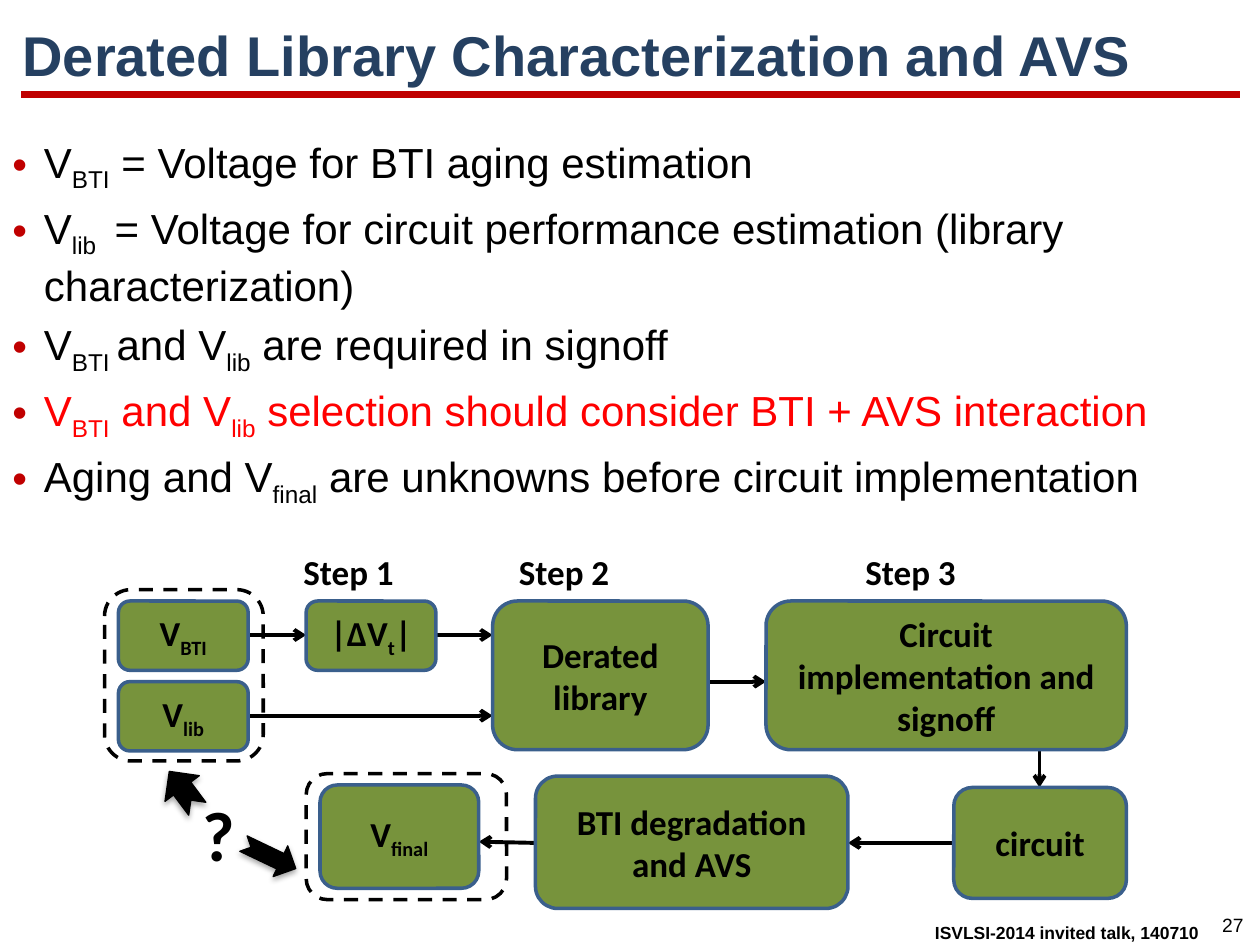
from lxml.etree import SubElement
from pptx import Presentation
from pptx.dml.color import RGBColor
from pptx.enum.dml import MSO_LINE
from pptx.enum.shapes import MSO_CONNECTOR, MSO_SHAPE
from pptx.enum.text import MSO_ANCHOR, PP_ALIGN
from pptx.oxml import parse_xml
from pptx.oxml.ns import nsdecls, qn
from pptx.util import Pt

PX = 9144
BLACK = RGBColor(0x00, 0x00, 0x00)
NAVY = RGBColor(0x25, 0x40, 0x61)
CRIMSON = RGBColor(0xC0, 0x00, 0x00)
RED = RGBColor(0xFF, 0x00, 0x00)
GREEN = RGBColor(0x77, 0x93, 0x3C)
BLUE = RGBColor(0x3A, 0x5F, 0x8C)

BULLETS = [
    ("V~BTI~ = Voltage for BTI aging estimation", BLACK),
    ("V~lib ~ = Voltage for circuit performance estimation (library characterization)", BLACK),
    ("V~BTI ~and V~lib~ are required in signoff", BLACK),
    ("V~BTI~ and V~lib~ selection should consider BTI + AVS interaction", RED),
    ("Aging and V~final~ are unknowns before circuit implementation", BLACK),
]
STEPS = [("Step 1", 148), ("Step 2", 319), ("Step 3", 594)]
BLOCKS = [
    ("BTI degradation and AVS", 342, 184, 248, 105),
    ("V~final~", 171, 191, 126, 82),
    ("V~BTI~", 11, 45, 103, 55),
    ("|ΔV~t~|", 160, 45, 103, 55),
    ("V~lib~", 11, 109, 103, 55),
    ("Derated library", 308, 45, 171, 118),
    ("Circuit implementation and signoff", 525, 45, 286, 118),
    ("circuit", 674, 193, 137, 88),
]
GROUPS = [(160, 182, 159, 100), (0, 36, 126, 136)]
FLOWS = [
    (674, 237, 590, 237),
    (342, 237, 297, 236),
    (114, 72, 160, 72),
    (114, 136, 308, 136),
    (262, 72, 308, 72),
    (479, 109, 525, 109),
    (742, 164, 742, 193),
]
POINTERS = [(108, 234, 46, 27, 25.5), (44, 178, 37, 34, 233.2)]


def scaled(*lengths):
    """Turn px lengths into EMU."""
    return [length * PX for length in lengths]


def write(paragraph, text, *, size, font="Arial", color=BLACK, bold=False, align=PP_ALIGN.LEFT):
    """Write text into a paragraph, with the parts between tildes as subscripts."""
    paragraph.alignment = align
    for index, part in enumerate(text.split("~")):
        if not part:
            continue
        run = paragraph.add_run()
        run.text = part
        run.font.name = font
        run.font.size = Pt(size)
        run.font.bold = bold
        run.font.color.rgb = color
        if index % 2:
            run._r.get_or_add_rPr().set("baseline", "-25000")


def add_frame(slide, box, wrap=True, anchor=MSO_ANCHOR.TOP):
    """Add an empty text box and return its text frame."""
    frame = slide.shapes.add_textbox(*scaled(*box)).text_frame
    frame.word_wrap = wrap
    frame.vertical_anchor = anchor
    return frame


def add_line(slide, ends, color=BLACK, width=2.25, arrow=False):
    """Add a straight line, with an open arrowhead at its end if asked."""
    connector = slide.shapes.add_connector(MSO_CONNECTOR.STRAIGHT, *scaled(*ends))
    connector.line.color.rgb = color
    connector.line.width = Pt(width)
    if arrow:
        SubElement(connector.line._get_or_add_ln(), qn("a:tailEnd"), type="arrow")
    SubElement(connector._element.spPr, qn("a:effectLst"))


def add_block(slide, box, kind=MSO_SHAPE.ROUNDED_RECTANGLE, fill=None, line=BLACK, width=2):
    """Add a preset shape without a shadow."""
    shape = slide.shapes.add_shape(kind, *scaled(*box))
    shape.shadow.inherit = False
    if fill is None:
        shape.fill.background()
    else:
        shape.fill.solid()
        shape.fill.fore_color.rgb = fill
    shape.line.color.rgb = line
    shape.line.width = Pt(width)
    return shape


def add_pointer(slide, box, angle):
    """Add a rotated notched arrow with a soft shadow below it."""
    shape = add_block(slide, box, MSO_SHAPE.NOTCHED_RIGHT_ARROW, fill=BLACK, width=0.75)
    shape.rotation = angle
    shape._element.spPr.find(qn("a:effectLst")).append(parse_xml(
        f'<a:outerShdw {nsdecls("a")} blurRad="40000" dist="23000" dir="5400000" rotWithShape="0">'
        '<a:srgbClr val="000000"><a:alpha val="35000"/></a:srgbClr></a:outerShdw>'))


def add_bullet(paragraph):
    """Give a paragraph a hanging crimson bullet."""
    properties = paragraph._p.get_or_add_pPr()
    properties.set("marL", str(25 * PX))
    properties.set("indent", str(-25 * PX))
    color = SubElement(properties, qn("a:buClr"))
    SubElement(color, qn("a:srgbClr"), val=str(CRIMSON))
    SubElement(properties, qn("a:buFont"), typeface="Arial")
    SubElement(properties, qn("a:buChar"), char="•")


def add_header(slide, left, top, width, height):
    """Place the title and the rule under it."""
    frame = add_frame(slide, (left, top, width, height), anchor=MSO_ANCHOR.MIDDLE)
    write(frame.paragraphs[0], "Derated Library Characterization and AVS", size=32, color=NAVY, bold=True)
    rule = top + height + 1
    add_line(slide, (left + 9, rule, left + width - 16, rule), CRIMSON, 4.5)


def add_body(slide, left, top, width, height):
    """Place the bulleted list."""
    frame = add_frame(slide, (left, top, width, height))
    frame.margin_top = 9 * PX
    for index, (text, color) in enumerate(BULLETS):
        paragraph = frame.add_paragraph() if index else frame.paragraphs[0]
        add_bullet(paragraph)
        if index:
            paragraph.space_before = Pt(5)
        write(paragraph, text, size=24, color=color)


def add_flow(slide, left, top):
    """Place the signoff flow diagram from its top left corner."""
    for x, y, width, height in GROUPS:
        group = add_block(slide, (left + x, top + y, width, height))
        group.line.dash_style = MSO_LINE.DASH
    for x1, y1, x2, y2 in FLOWS:
        add_line(slide, (left + x1, top + y1, left + x2, top + y2), arrow=True)
    for text, x, y, width, height in BLOCKS:
        block = add_block(slide, (left + x, top + y, width, height), fill=GREEN, line=BLUE)
        block.text_frame.word_wrap = True
        block.text_frame.vertical_anchor = MSO_ANCHOR.MIDDLE
        write(block.text_frame.paragraphs[0], text, size=20, font="Calibri", bold=True, align=PP_ALIGN.CENTER)
    for text, x in STEPS:
        frame = add_frame(slide, (left + x, top, 93, 44), wrap=False)
        write(frame.paragraphs[0], text, size=20, font="Calibri", bold=True)
    frame = add_frame(slide, (left + 68, top + 191, 46, 77), wrap=False)
    write(frame.paragraphs[0], "?", size=40, font="Calibri", bold=True)
    for x, y, width, height, angle in POINTERS:
        add_pointer(slide, (left + x, top + y, width, height), angle)


def add_footer(slide, left, top):
    """Place the talk name and the slide number."""
    talk = add_frame(slide, (left, top + 7, 268, 27))
    write(talk.paragraphs[0], "ISVLSI-2014 invited talk, 140710", size=10, bold=True, align=PP_ALIGN.RIGHT)
    number = add_frame(slide, (left + 266, top, 39, 29), wrap=False)
    write(number.paragraphs[0], "27", size=11, align=PP_ALIGN.CENTER)


def main():
    """Build the slide and save it."""
    presentation = Presentation()
    presentation.slide_width, presentation.slide_height = scaled(1000, 750)
    slide = presentation.slides.add_slide(presentation.slide_layouts[6])
    add_header(slide, 8, 12, 992, 62)
    add_body(slide, 0, 99, 985, 619)
    add_flow(slide, 83, 432)
    add_footer(slide, 693, 720)
    presentation.save("out.pptx")


if __name__ == "__main__":
    main()
